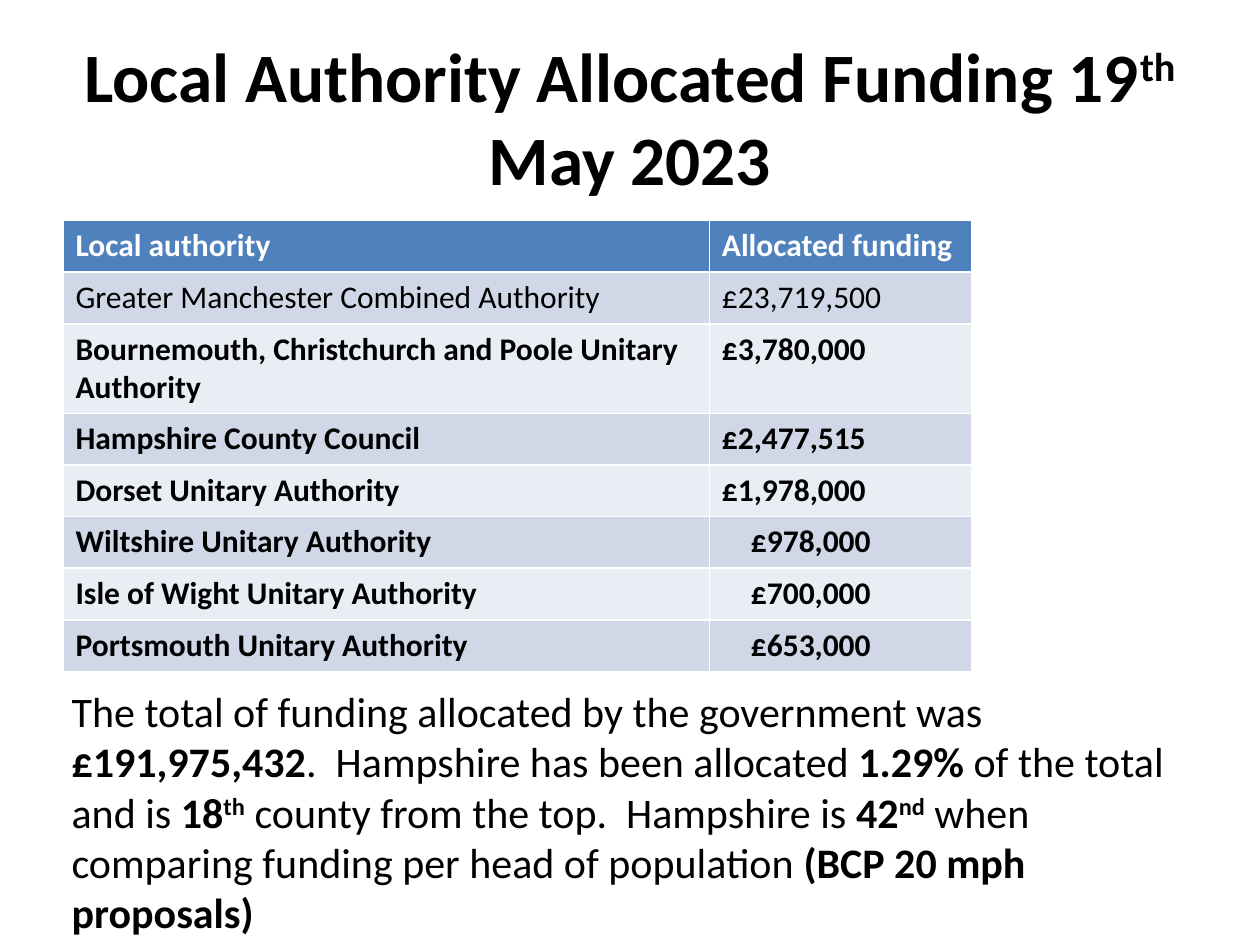
import pptx
import pptx.util
import pptx.dml.color
import pptx.enum.text

Inches = pptx.util.Inches
Pt = pptx.util.Pt
Enum = pptx.enum.text


def color(code):
    return pptx.dml.color.RGBColor.from_string(code)


class Deck:
    font = "Calibri"
    ink = "000000"
    white = "FFFFFF"
    head = "4F81BD"
    bands = ("D0D8E8", "E9EDF4")

    def __init__(self):
        self.file = pptx.Presentation()
        self.file.slide_width = Inches(10)
        self.file.slide_height = Inches(7.5)
        self.slide = self.file.slides.add_slide(self.file.slide_layouts[5])

    def style(self, run, size, bold=False, ink=None):
        run.font.name = self.font
        run.font.size = Pt(size)
        run.font.bold = bold
        run.font.color.rgb = color(ink or self.ink)

    def runs(self, para, parts, size):
        for text, marks in parts:
            run = para.add_run()
            run.text = text
            self.style(run, size, "b" in marks)
            if "^" in marks:
                run._r.get_or_add_rPr().set("baseline", "30000")

    def title(self, parts, box, size):
        shape = self.slide.shapes.title
        shape.left, shape.top, shape.width, shape.height = map(Inches, box)
        frame = shape.text_frame
        frame.auto_size = Enum.MSO_AUTO_SIZE.NONE
        frame.vertical_anchor = Enum.MSO_ANCHOR.MIDDLE
        para = frame.paragraphs[0]
        para.alignment = Enum.PP_ALIGN.CENTER
        self.runs(para, parts, size)

    def text(self, parts, box, size):
        shape = self.slide.shapes.add_textbox(*map(Inches, box))
        frame = shape.text_frame
        frame.word_wrap = True
        frame.auto_size = Enum.MSO_AUTO_SIZE.SHAPE_TO_FIT_TEXT
        self.runs(frame.paragraphs[0], parts, size)

    def cell(self, cell, text, fill, bold, ink):
        cell.fill.solid()
        cell.fill.fore_color.rgb = color(fill)
        cell.text_frame.text = text
        self.style(cell.text_frame.paragraphs[0].runs[0], 18, bold, ink)

    def table(self, rows, left, top, widths, height, inset):
        shape = self.slide.shapes.add_table(
            len(rows), len(widths), Inches(left), Inches(top),
            Inches(sum(widths)), Inches(height * len(rows)))
        table = shape.table
        for col, width in zip(table.columns, widths):
            col.width = Inches(width)
        for i, row in enumerate(rows):
            table.rows[i].height = Inches(height)
            fill = self.bands[(i - 1) % 2] if i else self.head
            ink = self.ink if i else self.white
            for j, text in enumerate(row):
                self.cell(table.cell(i, j), text, fill, i != 1, ink)
            if i and row[1].count(",") == 1:
                table.cell(i, 1).margin_left = Inches(0.1 + inset)


def main():
    deck = Deck()
    deck.title([("Local Authority Allocated Funding 19", "b"), ("th", "b^"),
                (" May 2023", "b")], (0.5, 0.3, 9, 1.25), 39.6)
    rows = [
        ("Local authority", "Allocated funding"),
        ("Greater Manchester Combined Authority", "£23,719,500"),
        ("Bournemouth, Christchurch and Poole Unitary Authority", "£3,780,000"),
        ("Hampshire County Council", "£2,477,515"),
        ("Dorset Unitary Authority", "£1,978,000"),
        ("Wiltshire Unitary Authority", "£978,000"),
        ("Isle of Wight Unitary Authority", "£700,000"),
        ("Portsmouth Unitary Authority", "£653,000"),
    ]
    deck.table(rows, 0.5, 1.75, (5.13, 2.08), 0.41, 0.23)
    deck.text([
        ("The total of funding allocated by the government was ", ""),
        ("£191,975,432", "b"),
        (".  Hampshire has been allocated ", ""),
        ("1.29%", "b"),
        (" of the total and is ", ""),
        ("18", "b"), ("th", "b^"),
        (" county from the top.  Hampshire is ", ""),
        ("42", "b"), ("nd", "b^"),
        (" when comparing funding per head of population ", ""),
        ("(BCP 20 mph proposals)", "b"),
    ], (0.47, 5.39, 9.22, 2.12), 24)
    deck.file.save("out.pptx")


if __name__ == "__main__":
    main()
